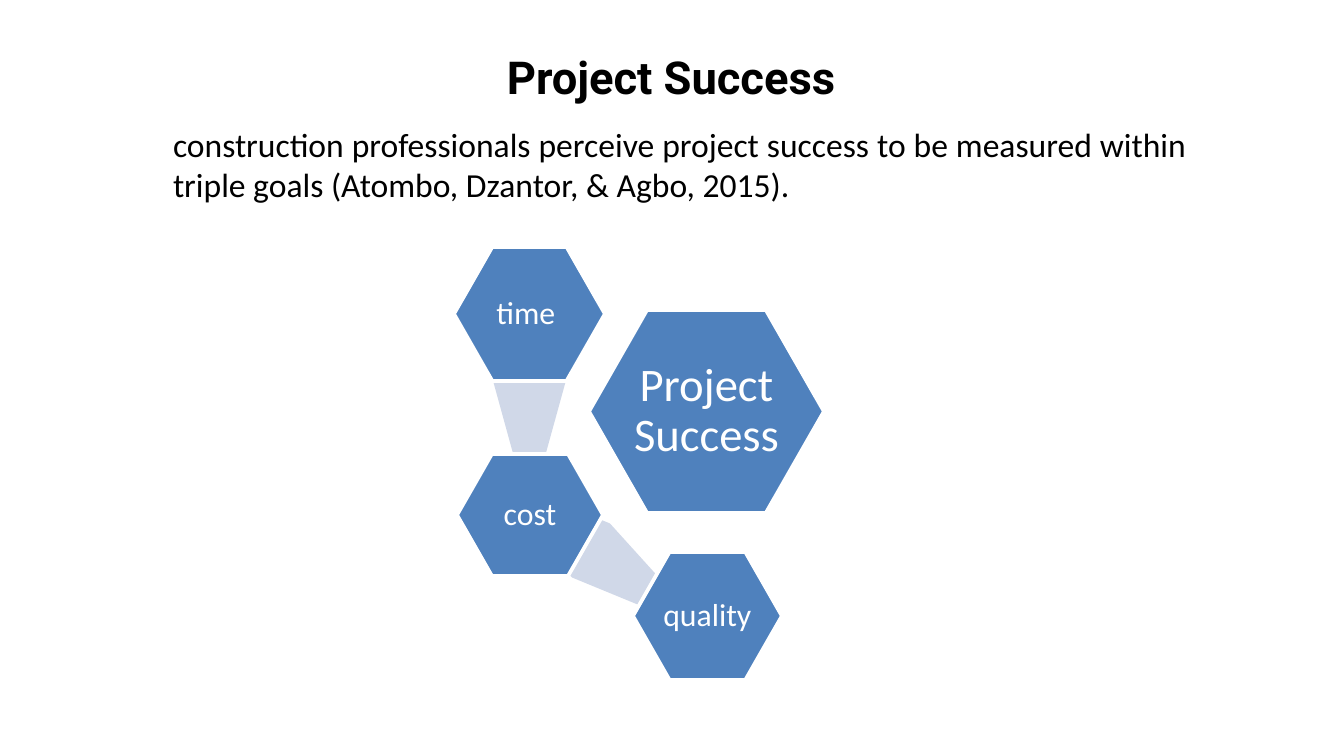
from pptx import Presentation
from pptx.dml.color import RGBColor
from pptx.enum.shapes import MSO_SHAPE
from pptx.enum.text import MSO_ANCHOR, PP_ALIGN
from pptx.util import Emu, Pt

SCALE = 914400 / 134.4
COLORS = {"ink": "000000", "white": "FFFFFF", "node": "4F81BD", "link": "D0D8E8"}


def px(num):
    return Emu(round(num * SCALE))


def color(name):
    return RGBColor.from_string(COLORS[name])


def write(shape, text, size, font="Calibri", bold=False, ink="ink",
          align=PP_ALIGN.CENTER, anchor=MSO_ANCHOR.MIDDLE, inset=(13, 7), space=1.0):
    frame = shape.text_frame
    frame.word_wrap = True
    frame.vertical_anchor = anchor
    frame.margin_left = frame.margin_right = px(inset[0])
    frame.margin_top = frame.margin_bottom = px(inset[1])
    para = frame.paragraphs[0]
    para.alignment = align
    para.line_spacing = space
    run = para.add_run()
    run.text = text
    run.font.name = font
    run.font.size = Pt(size)
    run.font.bold = bold
    run.font.color.rgb = color(ink)


def label(slide, box, text, size, **style):
    write(slide.shapes.add_textbox(*map(px, box)), text, size, **style)


def hexagon(slide, box, fill, adjust):
    shape = slide.shapes.add_shape(MSO_SHAPE.HEXAGON, *map(px, box))
    shape.shadow.inherit = False
    shape.adjustments[0] = adjust
    shape.adjustments[1] = 1.155
    shape.fill.solid()
    shape.fill.fore_color.rgb = color(fill)
    shape.line.fill.background()
    return shape


def node(slide, box, text, size):
    shape = hexagon(slide, box, "node", 0.286)
    shape.line.color.rgb = color("white")
    shape.line.width = Pt(2)
    write(shape, text, size, ink="white", inset=(3, 3), space=0.9)


def link(slide, box, turn=0):
    """Draw a pale hexagon that shows as a taper between two nodes."""
    hexagon(slide, box, "link", 0.289).rotation = turn


def main():
    deck = Presentation()
    deck.slide_width, deck.slide_height = px(1344), px(756)
    slide = deck.slides.add_slide(deck.slide_layouts[6])

    label(slide, (142, 40, 1058, 72), "Project Success", 24.3, font="Roboto", bold=True)
    label(slide, (160, 117, 1040, 95),
          "construction professionals perceive project success to be measured "
          "within triple goals (Atombo, Dzantor, & Agbo, 2015).",
          18, align=PP_ALIGN.JUSTIFY, anchor=MSO_ANCHOR.TOP)

    node(slide, (589, 310, 235, 203), "Project Success", 25)
    link(slide, (493, 304, 73, 153))
    node(slide, (454, 247, 151, 134), "time ", 17)
    link(slide, (558, 466, 66, 169), 305.1)
    node(slide, (457, 454, 146, 122), "cost", 17)
    node(slide, (633, 552, 149, 128), "quality", 17)
    deck.save("out.pptx")


if __name__ == "__main__":
    main()
